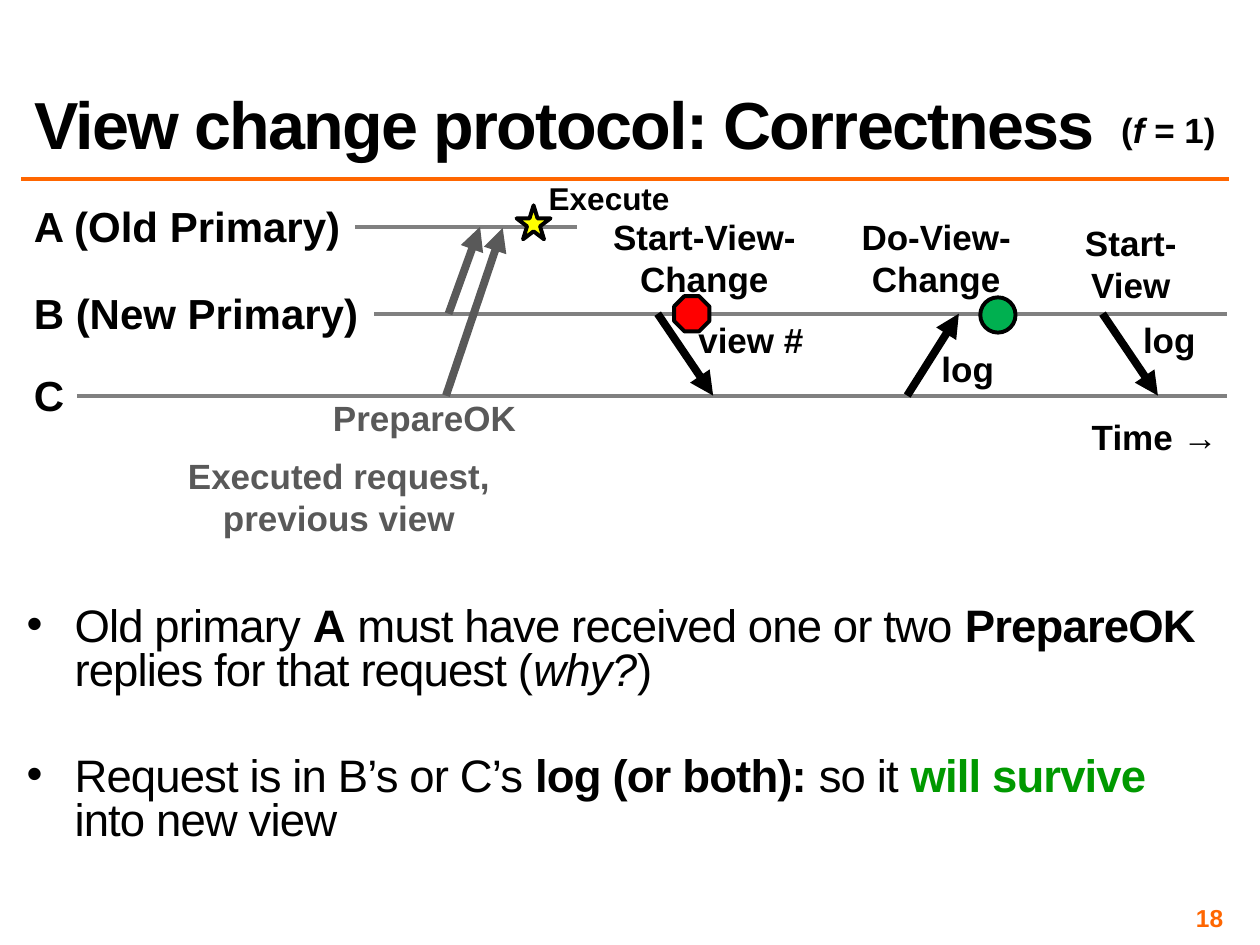
"""Build the slide on the correctness of the view change protocol."""
import pptx
import pptx.util
import pptx.dml.color
import pptx.enum.shapes
import pptx.enum.text
import pptx.oxml.ns
import lxml.etree

Pt = pptx.util.Pt
Shape = pptx.enum.shapes.MSO_SHAPE
Align = pptx.enum.text.PP_ALIGN
Anchor = pptx.enum.text.MSO_ANCHOR
qn = pptx.oxml.ns.qn

HUES = {"ink": "000000", "rule": "FF6600", "axis": "808080", "past": "595959",
        "good": "009900", "stop": "FF0000", "done": "00B050", "star": "FFFF00"}
COLS, ROWS = 100, 75


class Board:
    def __init__(self, deck):
        self.deck = deck
        self.font = "Arial"
        self.slide = deck.slides.add_slide(deck.slide_layouts[5])

    def x(self, col):
        return round(self.deck.slide_width * col / COLS)

    def y(self, row):
        return round(self.deck.slide_height * row / ROWS)

    def box(self, at):
        return self.x(at[0]), self.y(at[1]), self.x(at[2]), self.y(at[3])

    def hue(self, name):
        return pptx.dml.color.RGBColor.from_string(HUES[name])

    def style(self, run, size, hue="ink", bold=True, slant=False, track=0):
        font = run.font
        font.name, font.size = self.font, Pt(size)
        font.bold, font.italic = bold, slant
        font.color.rgb = self.hue(hue)
        if track:
            run._r.get_or_add_rPr().set("spc", str(track))

    def title(self, text, at):
        shape = self.slide.shapes.title
        shape.left, shape.top, shape.width, shape.height = self.box(at)
        frame = shape.text_frame
        frame.text = text
        frame.auto_size = pptx.enum.text.MSO_AUTO_SIZE.NONE
        frame.vertical_anchor = Anchor.BOTTOM
        para = frame.paragraphs[0]
        para.alignment, para.line_spacing = Align.LEFT, 0.8
        self.style(para.runs[0], 38, track=-100)

    def frame(self, at, wrap=True, inset=None):
        frame = self.slide.shapes.add_textbox(*self.box(at)).text_frame
        frame.word_wrap = wrap
        if inset is not None:
            frame.margin_left = frame.margin_right = Pt(inset)
            frame.margin_top = frame.margin_bottom = Pt(inset)
        return frame

    def label(self, text, at, size=20, hue="ink", align=Align.CENTER,
              wrap=False, inset=None):
        frame = self.frame(at, wrap, inset)
        frame.text = text
        for para in frame.paragraphs:
            para.alignment = align
            self.style(para.runs[0], size, hue)
        return frame

    def mixed(self, para, parts, size, track=0):
        for text, look in parts:
            run = para.add_run()
            run.text = text
            self.style(run, size, look.get("hue", "ink"), look.get("bold", False),
                       look.get("slant", False), track)

    def points(self, items, at, gap):
        frame = self.frame(at, inset=3)
        for i, parts in enumerate(items):
            para = frame.add_paragraph() if i else frame.paragraphs[0]
            para.line_spacing = 0.8
            para.space_before = Pt(gap if i else 5)
            props = para._p.get_or_add_pPr()
            props.set("marL", str(self.x(3.8)))
            props.set("indent", str(-self.x(3.8)))
            lxml.etree.SubElement(props, qn("a:buFont")).set("typeface", self.font)
            lxml.etree.SubElement(props, qn("a:buChar")).set("char", "•")
            self.mixed(para, parts, 26, -50)

    def line(self, start, end, hue="axis", width=2.25, head=False):
        line = self.slide.shapes.add_connector(
            pptx.enum.shapes.MSO_CONNECTOR.STRAIGHT,
            self.x(start[0]), self.y(start[1]), self.x(end[0]), self.y(end[1]))
        line.line.color.rgb = self.hue(hue)
        line.line.width = Pt(width)
        if head:
            tip = lxml.etree.SubElement(line.line._get_or_add_ln(), qn("a:tailEnd"))
            tip.set("type", "triangle")
        lxml.etree.SubElement(line._element.spPr, qn("a:effectLst"))

    def arrow(self, start, end, hue="ink"):
        self.line(start, end, hue, 4.5, True)

    def mark(self, kind, at, fill):
        shape = self.slide.shapes.add_shape(kind, *self.box(at))
        shape.shadow.inherit = False
        shape.fill.solid()
        shape.fill.fore_color.rgb = self.hue(fill)
        shape.line.color.rgb = self.hue("ink")
        shape.line.width = Pt(2.25)


def main():
    deck = pptx.Presentation()
    deck.slide_width, deck.slide_height = pptx.util.Inches(10), pptx.util.Inches(7.5)
    board = Board(deck)
    bold, slant = {"bold": True}, {"slant": True}
    edge, row_a, row_b, row_c = 1.7, 18, 24.9, 31.4

    board.line((edge, 14.2), (97.5, 14.2), "rule", 2)
    board.title("View change protocol: Correctness", (edge, 1.7, 95.8, 11.7))
    fault = board.frame((87.2, 8.1, 10.3, 4.4), wrap=False).paragraphs[0]
    fault.alignment = Align.CENTER
    board.mixed(fault, [(" (", bold), ("f", {"bold": True, "slant": True}),
                        (" = 1)", bold)], 20)

    for name, row, width, start, end in (
            ("A (Old Primary)", row_a, 26.6, 28.2, 45.8),
            ("B (New Primary)", row_b, 28, 29.7, 97.4),
            ("C", row_c, 4.5, 6.1, 97.4)):
        board.label(name, (edge, row - 2.6, width, 5), 24, align=Align.LEFT)
        board.line((start, row), (end, row))

    board.arrow((35.4, row_c), (39.9, row_a + 0.1), "past")
    board.arrow((35.6, row_b), (38.1, row_a), "past")
    board.label("PrepareOK", (25, 31, 17.4, 4.4), hue="past", wrap=True)
    board.label("Executed request,\nprevious view", (13.8, 35.6, 26.2, 7.7), hue="past")
    board.label("Execute", (42.5, 13.7, 11.7, 4), 18)
    board.label("Time →", (85.6, 32.5, 12.1, 4.4))

    for name, at, start, end, note, spot in (
            ("Start-View-Change", (47.2, 16.6, 17.4, 7.7), (52.2, row_b),
             (56.6, row_c), "view #", (54.4, 24.8, 10.4, 4.4)),
            ("Do-View-Change", (65.9, 16.6, 16.8, 7.7), (72, row_c),
             (76.1, row_b), "log", (73.7, 27.1, 6.2, 4.4)),
            ("Start-View", (84.1, 17.1, 11.3, 7.7), (87.5, row_b),
             (91.9, row_c), "log", (89.7, 24.8, 6.2, 4.4))):
        board.arrow(start, end)
        board.label(name, at, wrap=True)
        board.label(note, spot)

    board.mark(Shape.STAR_5_POINT, (41, 16.3, 2.7, 2.7), "star")
    board.mark(Shape.OCTAGON, (53.5, 23.5, 2.8, 2.8), "stop")
    board.mark(Shape.OVAL, (77.8, 23.6, 2.8, 2.8), "done")

    board.points([
        [("Old primary ", {}), ("A", bold), (" must have received one or two ", {}),
         ("PrepareOK", bold), (" replies for that request (", {}),
         ("why?", slant), (")", {})],
        [("Request is in B’s or C’s ", {}), ("log (or both): ", bold),
         ("so it ", {}), ("will survive ", {"bold": True, "hue": "good"}),
         ("into new view", {})],
    ], (edge, 47.8, 95.8, 20.7), 36)
    page = board.label("18", (74.2, 71.7, 23.3, 2.3), 14, "rule", Align.RIGHT, True, 3)
    page.vertical_anchor = Anchor.MIDDLE
    deck.save("out.pptx")


if __name__ == "__main__":
    main()
